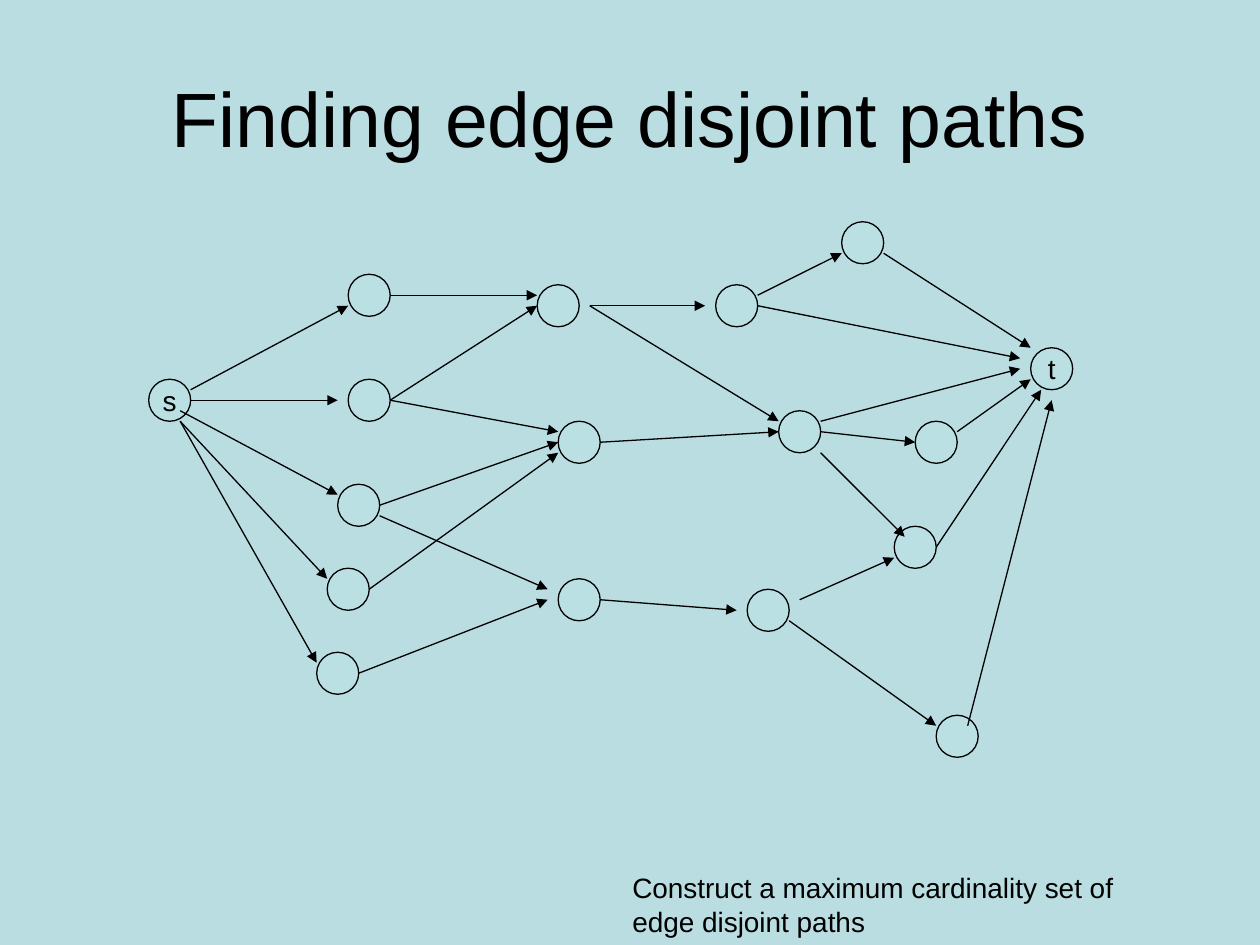
from lxml import etree
from pptx import Presentation
from pptx.dml.color import RGBColor
from pptx.enum.shapes import MSO_CONNECTOR, MSO_SHAPE
from pptx.enum.text import MSO_ANCHOR, PP_ALIGN
from pptx.oxml.ns import qn
from pptx.util import Inches, Pt

STRAIGHT = MSO_CONNECTOR.STRAIGHT
OVAL = MSO_SHAPE.OVAL
LEFT, CENTER = PP_ALIGN.LEFT, PP_ALIGN.CENTER
TOP, MIDDLE = MSO_ANCHOR.TOP, MSO_ANCHOR.MIDDLE

BACKGROUND = RGBColor(0xBA, 0xDD, 0xE1)
NODE_FILL = RGBColor(0xBB, 0xE0, 0xE3)
BLACK = RGBColor(0, 0, 0)
FONT = "Arial"

TITLE = "Finding edge disjoint paths"
TASK = ["Construct a maximum cardinality set of", "edge disjoint paths"]

# The graph lies on a grid of twelfths of an inch; a node is 4 steps wide
STEP = 1 / 12
ORIGIN_X, ORIGIN_Y = 1.18, 1.76
NODE_STEPS = 4
LABELLED = ("s", "t")

# Node: column and row of its top left corner
NODES = {
    "s": (0, 15),
    "a": (19, 5), "b": (19, 15), "c": (18, 25), "d": (17, 33), "e": (16, 41),
    "f": (37, 6), "g": (39, 19), "h": (39, 34),
    "i": (54, 6), "j": (60, 18), "k": (57, 35),
    "l": (66, 0), "m": (73, 19), "n": (71, 29), "o": (75, 47),
    "t": (84, 12),
}

# Edge: start node, steps from its corner, end node, steps from its corner
EDGES = [
    ("s", (4, 1), "a", (0, 3)), ("s", (4, 2), "b", (-1, 2)),
    ("s", (3, 3), "c", (0, 1)), ("s", (3, 4), "d", (0, 1)),
    ("s", (3, 4), "e", (0, 1)), ("a", (4, 2), "f", (0, 1)),
    ("b", (4, 2), "f", (0, 2)), ("b", (4, 2), "g", (0, 1)),
    ("c", (4, 2), "g", (0, 2)), ("c", (4, 3), "h", (-1, 1)),
    ("d", (4, 2), "g", (0, 3)), ("e", (4, 2), "h", (-1, 2)),
    ("f", (5, 2), "i", (-1, 2)), ("f", (5, 2), "j", (0, 1)),
    ("g", (4, 2), "j", (0, 2)), ("h", (4, 2), "k", (-1, 2)),
    ("i", (4, 1), "l", (0, 3)), ("i", (4, 2), "t", (-1, 1)),
    ("j", (4, 1), "t", (-1, 2)), ("j", (4, 2), "m", (0, 2)),
    ("j", (4, 4), "n", (1, 1)), ("k", (5, 1), "n", (0, 3)),
    ("k", (4, 3), "o", (0, 1)), ("l", (4, 3), "t", (0, 0)),
    ("m", (4, 1), "t", (0, 3)), ("n", (4, 2), "t", (1, 4)),
    ("o", (3, 1), "t", (2, 5)),
]


def write(shape, lines, size=16, align=LEFT, anchor=TOP, wrap=False):
    frame = shape.text_frame
    frame.word_wrap = wrap
    frame.vertical_anchor = anchor
    for index, line in enumerate(lines):
        para = frame.paragraphs[0] if index == 0 else frame.add_paragraph()
        para.alignment = align
        span = para.add_run()
        span.text = line
        span.font.name = FONT
        span.font.size = Pt(size)
        span.font.color.rgb = BLACK


def grid_point(node, offset=(0, 0)):
    column, row = NODES[node]
    return (Inches(ORIGIN_X + (column + offset[0]) * STEP),
            Inches(ORIGIN_Y + (row + offset[1]) * STEP))


def add_node(page, name):
    side = Inches(NODE_STEPS * STEP)
    node = page.shapes.add_shape(OVAL, *grid_point(name), side, side)
    node.shadow.inherit = False
    node.fill.solid()
    node.fill.fore_color.rgb = NODE_FILL
    node.line.color.rgb = BLACK
    node.line.width = Pt(0.75)
    if name in LABELLED:
        write(node, [name], align=CENTER, anchor=MIDDLE)


def add_edge(page, start, start_offset, end, end_offset):
    edge = page.shapes.add_connector(
        STRAIGHT, *grid_point(start, start_offset), *grid_point(end, end_offset))
    edge.line.color.rgb = BLACK
    edge.line.width = Pt(0.75)
    properties = edge.element.spPr
    arrow = etree.SubElement(properties.find(qn("a:ln")), qn("a:tailEnd"))
    arrow.set("type", "triangle")
    etree.SubElement(properties, qn("a:effectLst"))


def main():
    deck = Presentation()
    deck.slide_width, deck.slide_height = Inches(10), Inches(7.5)
    page = deck.slides.add_slide(deck.slide_layouts[6])
    page.background.fill.solid()
    page.background.fill.fore_color.rgb = BACKGROUND

    # Title
    box = page.shapes.add_textbox(Inches(0.5), Inches(0.3), Inches(9), Inches(1.25))
    write(box, [TITLE], size=44, align=CENTER, anchor=MIDDLE, wrap=True)

    # Graph
    for name in NODES:
        add_node(page, name)
    for edge in EDGES:
        add_edge(page, *edge)

    # Task
    box = page.shapes.add_textbox(Inches(4.92), Inches(6.86), Inches(4.1), Inches(0.64))
    write(box, TASK)

    deck.save("out.pptx")


if __name__ == "__main__":
    main()
